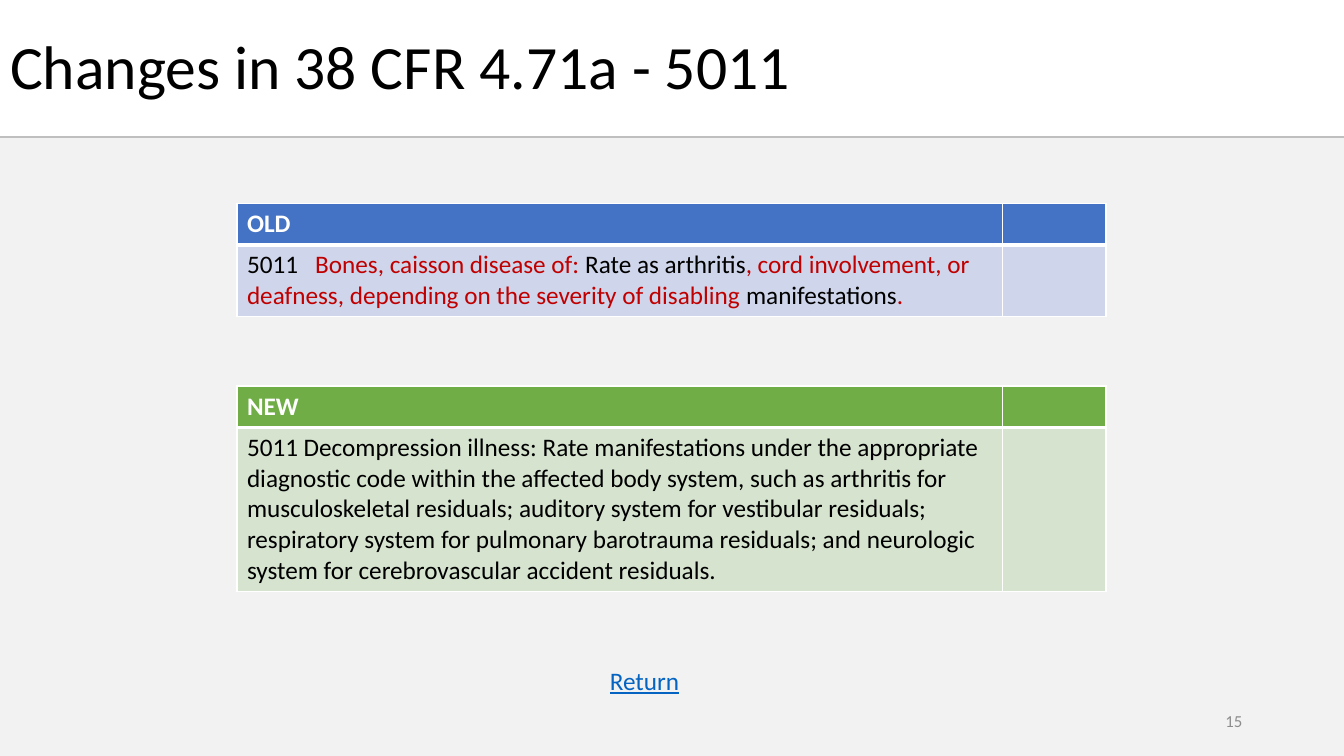
from lxml import etree
from pptx import Presentation
from pptx.dml.color import RGBColor
from pptx.enum.shapes import MSO_CONNECTOR as CONN, MSO_SHAPE as SHAPE
from pptx.enum.text import MSO_ANCHOR as ANCHOR, PP_ALIGN as ALIGN
from pptx.oxml.ns import qn
from pptx.util import Inches, Pt

# Content
FONT = "Calibri"
BLACK, WHITE, RED = "000000", "FFFFFF", "C00000"
TITLE = "Changes in 38 CFR 4.71a - 5011"
OLD_TEXT = [
    ("5011   ", BLACK),
    ("Bones, caisson disease of: ", RED),
    ("Rate as arthritis", BLACK),
    (", cord involvement, or deafness, depending on the severity of disabling ", RED),
    ("manifestations", BLACK),
    (".", RED),
]
NEW_TEXT = [
    ("5011 Decompression illness: Rate manifestations under the appropriate "
     "diagnostic code within the affected body system, such as arthritis for "
     "musculoskeletal residuals; auditory system for vestibular residuals; "
     "respiratory system for pulmonary barotrauma residuals; and neurologic "
     "system for cerebrovascular accident residuals.", BLACK),
]
# heading, body runs, top, body height, header fill, body fill
TABLES = [
    ("OLD", OLD_TEXT, 2.02, 0.7, "4472C4", "CFD5EA"),
    ("NEW", NEW_TEXT, 3.83, 1.6, "70AD47", "D5E3CF"),
]
TABLE_LEFT, COLUMNS, HEADER_HEIGHT = 2.35, (7.59, 1.03), 0.41
SLIDE_WIDTH, SLIDE_HEIGHT, BAND_TOP = 13.33, 7.5, 1.37


def rgb(color):
    return RGBColor.from_string(color)


def add_run(p, text, size, color, bold=False, underline=False):
    r = p.add_run()
    r.text = text
    font = r.font
    font.name, font.size, font.bold, font.underline = FONT, Pt(size), bold, underline
    font.color.rgb = rgb(color)


def add_text(slide, box, text, size, color, align=ALIGN.LEFT, anchor=ANCHOR.TOP,
             underline=False):
    tf = slide.shapes.add_textbox(*map(Inches, box)).text_frame
    tf.word_wrap, tf.vertical_anchor = True, anchor
    p = tf.paragraphs[0]
    p.alignment = align
    add_run(p, text, size, color, underline=underline)


def style_cell(cell, fill, top, bottom):
    """White borders with the given top and bottom widths, then the fill."""
    tc_pr = cell._tc.get_or_add_tcPr()
    for side, width in (("L", 1), ("R", 1), ("T", top), ("B", bottom)):
        ln = etree.SubElement(tc_pr, qn(f"a:ln{side}"), w=str(Pt(width)))
        solid = etree.SubElement(ln, qn("a:solidFill"))
        etree.SubElement(solid, qn("a:srgbClr"), val=WHITE)
    cell.fill.solid()
    cell.fill.fore_color.rgb = rgb(fill)


def add_rule_table(slide, heading, body, top, body_height, header_fill, body_fill):
    heights = (HEADER_HEIGHT, body_height)
    box = (TABLE_LEFT, top, sum(COLUMNS), sum(heights))
    table = slide.shapes.add_table(2, 2, *map(Inches, box)).table
    for column, width in zip(table.columns, COLUMNS):
        column.width = Inches(width)
    for row, height in zip(table.rows, heights):
        row.height = Inches(height)
    for i in range(2):
        style_cell(table.cell(0, i), header_fill, 1, 3)
        style_cell(table.cell(1, i), body_fill, 3, 1)
    add_run(table.cell(0, 0).text_frame.paragraphs[0], heading, 18, WHITE, bold=True)
    for text, color in body:
        add_run(table.cell(1, 0).text_frame.paragraphs[0], text, 18, color)


def main():
    prs = Presentation()
    prs.slide_width, prs.slide_height = Inches(SLIDE_WIDTH), Inches(SLIDE_HEIGHT)
    slide = prs.slides.add_slide(prs.slide_layouts[5])
    shapes = slide.shapes

    # Grey body band and its top rule
    band = shapes.add_shape(SHAPE.RECTANGLE, 0, Inches(BAND_TOP), prs.slide_width,
                            Inches(SLIDE_HEIGHT - BAND_TOP))
    band.shadow.inherit = False
    band.fill.solid()
    band.fill.fore_color.rgb = rgb("F2F2F2")
    band.line.fill.background()
    y = Inches(1.36)
    rule = shapes.add_connector(CONN.STRAIGHT, 0, y, prs.slide_width, y)
    rule.line.color.rgb = rgb("BFBFBF")
    rule.line.width = Pt(1.5)
    etree.SubElement(rule._element.spPr, qn("a:effectLst"))

    # Title, in front of the band
    title = shapes.title
    title.left, title.top, title.width, title.height = map(Inches, (0, 0.15, 8.83, 1.07))
    tf = title.text_frame
    tf.vertical_anchor = ANCHOR.MIDDLE
    p = tf.paragraphs[0]
    p.alignment, p.line_spacing = ALIGN.LEFT, 0.9
    add_run(p, TITLE, 44, BLACK)
    shapes._spTree.append(title._element)

    # Old and new rules
    for table in TABLES:
        add_rule_table(slide, *table)

    # Return label and slide number
    add_text(slide, (5.95, 6.55, 0.96, 0.4), "Return", 18, "0563C1", underline=True)
    add_text(slide, (9.42, 6.95, 3, 0.4), "15", 12, "8C8C8C", ALIGN.RIGHT, ANCHOR.MIDDLE)

    prs.save("out.pptx")


if __name__ == "__main__":
    main()
